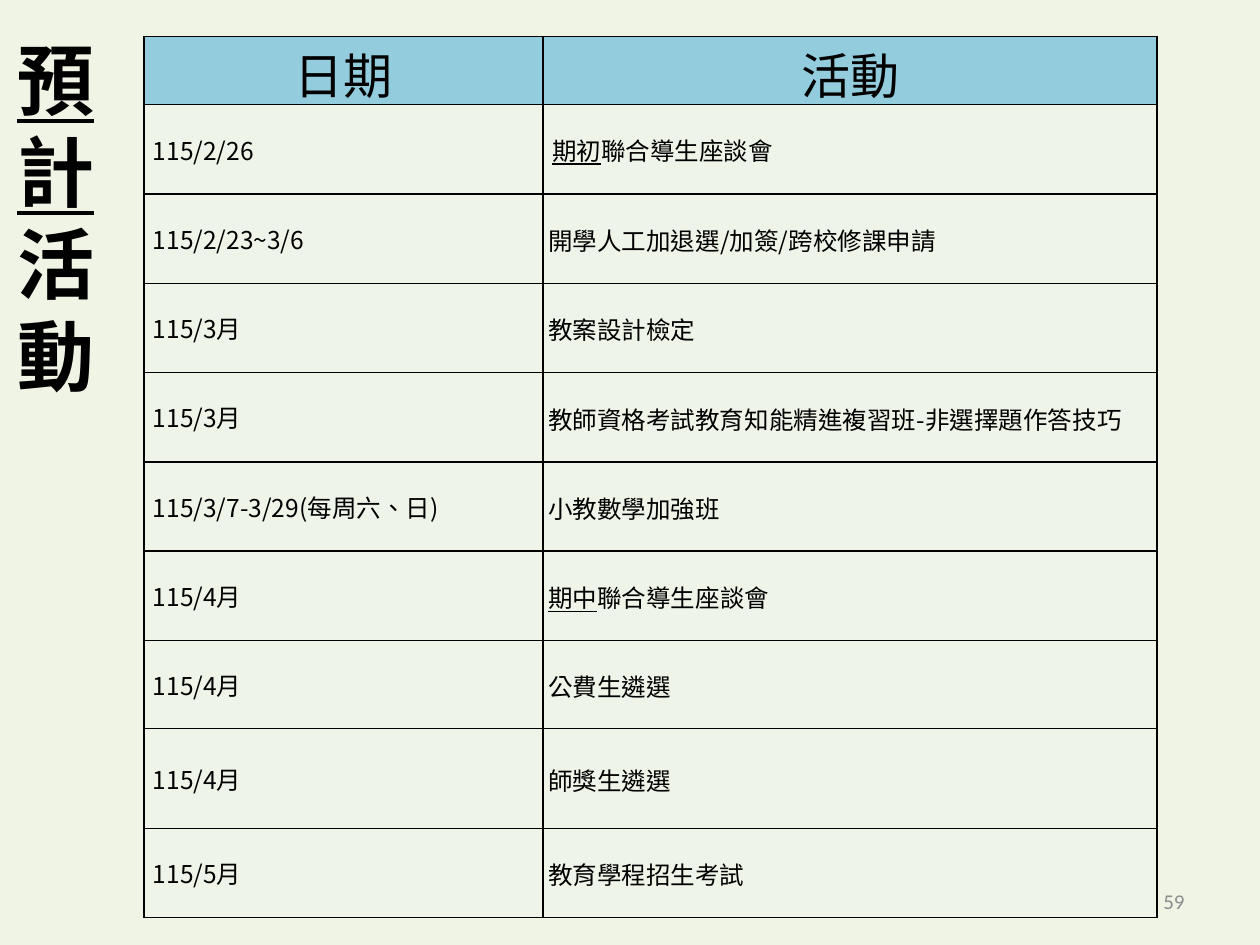
from pptx import Presentation
from pptx.dml.color import RGBColor
from pptx.enum.lang import MSO_LANGUAGE_ID
from pptx.enum.text import MSO_ANCHOR, PP_ALIGN
from pptx.oxml.ns import qn
from pptx.util import Cm, Pt
from lxml import etree

MIDDLE = MSO_ANCHOR.MIDDLE
LEFT, CENTER, RIGHT = PP_ALIGN.LEFT, PP_ALIGN.CENTER, PP_ALIGN.RIGHT
CHINESE = MSO_LANGUAGE_ID.TRADITIONAL_CHINESE

BLACK = RGBColor(0x00, 0x00, 0x00)
GRAY = RGBColor(0x8C, 0x8C, 0x8C)
PAPER = RGBColor(0xEF, 0xF4, 0xE5)
HEADER_BLUE = RGBColor(0x93, 0xCD, 0xDD)
CELL_GREEN = RGBColor(0xEE, 0xF4, 0xE8)

HEADINGS = ("日期", "活動")
# Date, underlined start of the activity, rest of the activity
EVENTS = [
    ("115/2/26", "期初", "聯合導生座談會"),
    ("115/2/23~3/6", "", "開學人工加退選/加簽/跨校修課申請"),
    ("115/3月", "", "教案設計檢定"),
    ("115/3月", "", "教師資格考試教育知能精進複習班-非選擇題作答技巧"),
    ("115/3/7-3/29(每周六、日)", "", "小教數學加強班"),
    ("115/4月", "期中", "聯合導生座談會"),
    ("115/4月", "", "公費生遴選"),
    ("115/4月", "", "師獎生遴選"),
    ("115/5月", "", "教育學程招生考試"),
]
COLUMN_WIDTHS = (8.05, 12.37)
ROW_HEIGHTS = [1.37] + [1.8] * 6 + [1.78, 2.01, 1.8]


class SlideStyle:
    chinese_font = "Noto Sans CJK SC"
    latin_font = "Calibri"

    def __init__(self, page):
        self.page = page
        page.background.fill.solid()
        page.background.fill.fore_color.rgb = PAPER

    def add_spans(self, paragraph, spans, size, color=BLACK, bold=False,
                  align=LEFT, font=chinese_font):
        """Fill a paragraph with (text, underlined) spans."""
        paragraph.alignment = align
        for text, underlined in spans:
            if not text:
                continue
            span = paragraph.add_run()
            span.text = text
            span.font.name = font
            span.font.size = Pt(size)
            span.font.bold = bold
            span.font.underline = underlined
            span.font.color.rgb = color
            span.font.language_id = CHINESE
            east_asian = etree.Element(qn("a:ea"), typeface=self.chinese_font)
            span.font._element.find(qn("a:latin")).addnext(east_asian)

    def text(self, left, top, width, height, spans, size, **look):
        box = self.page.shapes.add_textbox(Cm(left), Cm(top), Cm(width), Cm(height))
        frame = box.text_frame
        frame.word_wrap = True
        frame.vertical_anchor = MIDDLE
        paragraph = frame.paragraphs[0]
        self.add_spans(paragraph, spans, size, **look)
        return paragraph

    def table(self, left, top, widths, heights):
        frame = self.page.shapes.add_table(
            len(heights), len(widths), Cm(left), Cm(top),
            Cm(sum(widths)), Cm(sum(heights)))
        table = frame.table
        for column, width in zip(table.columns, widths):
            column.width = Cm(width)
        for row, height in zip(table.rows, heights):
            row.height = Cm(height)
        return table

    def cell(self, cell, spans, size, fill, margin, top=0, spacing=None, **look):
        cell.vertical_anchor = MIDDLE
        cell.margin_left = cell.margin_right = Cm(margin)
        cell.margin_top, cell.margin_bottom = Cm(top), 0
        paragraph = cell.text_frame.paragraphs[0]
        if spacing:
            paragraph.line_spacing = spacing
        self.add_spans(paragraph, spans, size, **look)
        self.borders(cell)
        cell.fill.solid()
        cell.fill.fore_color.rgb = fill

    def borders(self, cell):
        properties = cell._tc.get_or_add_tcPr()
        for side in ("a:lnL", "a:lnR", "a:lnT", "a:lnB"):
            line = etree.SubElement(properties, qn(side), w=str(Pt(1)))
            solid = etree.SubElement(line, qn("a:solidFill"))
            etree.SubElement(solid, qn("a:srgbClr"), val=str(BLACK))


def main():
    deck = Presentation()
    deck.slide_width, deck.slide_height = Cm(25.4), Cm(19.05)
    style = SlideStyle(deck.slides.add_slide(deck.slide_layouts[6]))

    # Title, one character per line in a narrow box
    title = style.text(0.1, -1.07, 2.24, 10.9,
                       [("預計", True), ("活動", False)], 44, bold=True)
    title.line_spacing = Pt(52.6)

    # Schedule
    table = style.table(2.9, 0.74, COLUMN_WIDTHS, ROW_HEIGHTS)
    for column, heading in enumerate(HEADINGS):
        style.cell(table.cell(0, column), [(heading, False)], 28, HEADER_BLUE,
                   0.08, top=0.03, align=CENTER)
    for row, (date, marked, activity) in enumerate(EVENTS, start=1):
        first = row == 1
        style.cell(table.cell(row, 0), [(date, False)], 14, CELL_GREEN, 0.18)
        style.cell(table.cell(row, 1), [(marked, True), (activity, False)], 14,
                   CELL_GREEN, 0.18 if first else 0.1,
                   spacing=None if first else 1.07,
                   font=style.latin_font if first else style.chinese_font)

    # Page number
    style.text(18.21, 17.65, 5.92, 1.02, [("59", False)], 12,
               color=GRAY, align=RIGHT, font=style.latin_font)

    deck.save("out.pptx")


if __name__ == "__main__":
    main()
